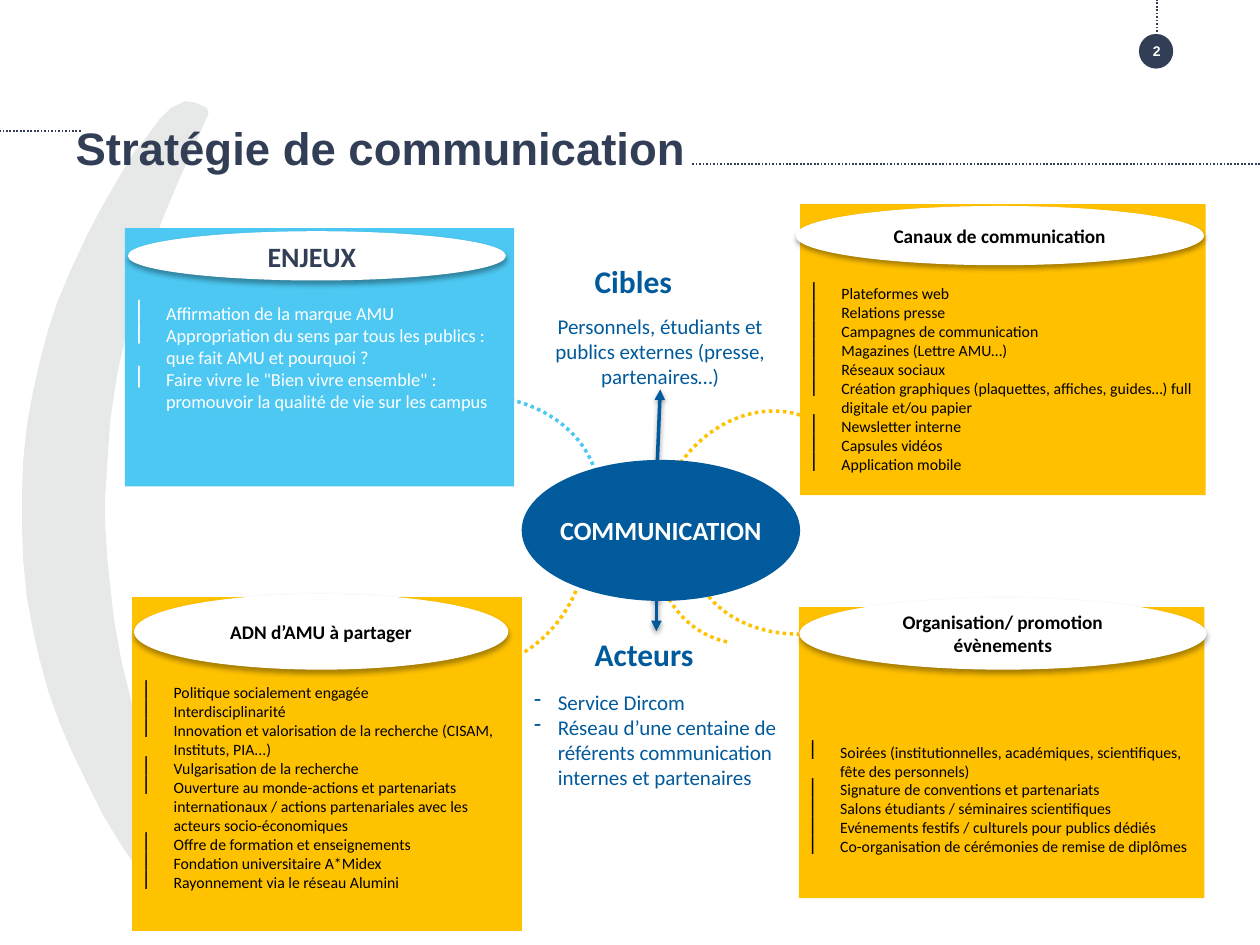
from lxml import etree
from pptx import Presentation
from pptx.dml.color import RGBColor
from pptx.enum.dml import MSO_LINE
from pptx.enum.shapes import MSO_CONNECTOR, MSO_SHAPE as Shape
from pptx.enum.text import MSO_ANCHOR as Anchor, PP_ALIGN as Align
from pptx.oxml.ns import qn
from pptx.util import Pt

COLORS = {"navy": "313E56", "blue": "005A9B", "sky": "4CC8F2", "gold": "FFC200",
          "amber": "FFC000", "grey": "E7E8E8", "white": "FFFFFF", "black": "000000"}
RGB = {name: RGBColor.from_string(value) for name, value in COLORS.items()}


def write(shape, lines, size, color, bold=False, align=Align.LEFT, anchor=Anchor.MIDDLE,
          insets=(0, 0, 0, 0), bullet=None, indent=0, font="Calibri"):
    frame = shape.text_frame
    frame.word_wrap = True
    frame.vertical_anchor = anchor
    frame.margin_left, frame.margin_top, frame.margin_right, frame.margin_bottom = map(Pt, insets)
    frame.text = "\n".join(lines)
    for para in frame.paragraphs:
        para.alignment = align
        if bullet:
            properties = para._p.get_or_add_pPr()
            properties.set("marL", str(Pt(indent)))
            properties.set("indent", str(-Pt(indent)))
            etree.SubElement(properties, qn("a:buChar"), char=bullet)
        for span in para.runs:
            span.font.name = font
            span.font.size = Pt(size)
            span.font.bold = bold
            span.font.color.rgb = RGB[color]


def set_effects(item, opacity=0, distance=0):
    effects = etree.SubElement(item._element.spPr, qn("a:effectLst"))
    if opacity:
        shadow = etree.SubElement(effects, qn("a:outerShdw"), blurRad=str(Pt(3.1)),
                                  dist=str(Pt(distance)), dir="5400000", rotWithShape="0")
        tone = etree.SubElement(shadow, qn("a:srgbClr"), val=COLORS["black"])
        etree.SubElement(tone, qn("a:alpha"), val=str(opacity * 1000))


deck = Presentation()
deck.slide_width, deck.slide_height = Pt(720), Pt(540)
page = deck.slides.add_slide(deck.slide_layouts[6])
shapes = page.shapes

outer_edge = [(118.8, 64.8), (118, 62), (111.6, 59), (105.8, 58.3), (98, 62), (91.4, 68.4),
              (84.2, 78.5), (77, 87.1), (68.4, 101.5), (57.6, 120.2), (49.7, 135.4),
              (41, 154.1), (33.1, 172.8), (28.1, 187.9), (23, 207.4), (19.4, 223.2),
              (15.8, 242.6), (13.7, 262.8), (13, 280.8), (13, 302.4), (13.7, 320.4),
              (15.8, 341.3), (19.4, 360.7), (23, 376.6), (28.1, 395.3), (34.6, 413.3),
              (41, 428.4), (49.7, 446.4), (59.8, 466.6), (71.3, 485.3), (79.9, 497.5),
              (87.8, 509.8), (94.3, 517), (103, 523.4), (111.6, 524.2), (118.8, 519.1)]
inner_edge = [(118.8, 517.7), (113, 504), (105.1, 486), (97.9, 469.4), (90.7, 450.7),
              (82, 426.9), (76.3, 407.5), (69.1, 378), (64.8, 354.2), (61.2, 321.8),
              (59.8, 300.2), (59.8, 283), (61.2, 261.4), (62.6, 240.5), (67, 211.7),
              (74.2, 181.4), (82.8, 152.6), (92.2, 126), (102.2, 102.2), (111.6, 81.4)]
outline = [(Pt(x), Pt(y)) for x, y in outer_edge + inner_edge]
builder = shapes.build_freeform(*outline[0])
builder.add_line_segments(outline[1:], close=True)
crescent = builder.convert_to_shape()
crescent.shadow.inherit = False
crescent.fill.solid()
crescent.fill.fore_color.rgb = RGB["grey"]
crescent.line.color.rgb = RGB["grey"]
crescent.line.width = Pt(0.75)

badge = shapes.add_shape(Shape.OVAL, Pt(650.8), Pt(19.4), Pt(19.6), Pt(19.8))
badge.shadow.inherit = False
badge.fill.solid()
badge.fill.fore_color.rgb = RGB["navy"]
badge.line.fill.background()

for points in [(661, 20.2, 661, -15.1), (46.1, 74.9, 0, 74.9), (720, 93.6, 395.3, 93.6)]:
    rule = shapes.add_connector(MSO_CONNECTOR.STRAIGHT, *map(Pt, points))
    rule.line.color.rgb = RGB["navy"]
    rule.line.width = Pt(1)
    rule.line.dash_style = MSO_LINE.ROUND_DOT
    set_effects(rule)

title = shapes.add_textbox(Pt(43.2), Pt(68.4), Pt(358.6), Pt(20.2))
write(title, ["Stratégie de communication"], 26, "navy", True, anchor=Anchor.TOP, font="Arial")
number = shapes.add_textbox(Pt(643), Pt(23.8), Pt(36), Pt(10.8))
write(number, ["2"], 8, "white", True, Align.CENTER, font="Arial")

for heading, top in [("Cibles", 149.8), ("Acteurs", 362.9)]:
    box = shapes.add_textbox(Pt(339.8), Pt(top), Pt(83.5), Pt(21.6))
    write(box, [heading], 18, "blue", True)

targets = shapes.add_textbox(Pt(305.3), Pt(178.6), Pt(144), Pt(43.9))
write(targets, ["Personnels, étudiants et publics externes (presse, partenaires…)"], 12, "blue",
      align=Align.CENTER)
actors = shapes.add_textbox(Pt(305.3), Pt(393.8), Pt(144), Pt(76.3))
write(actors, ["Service Dircom",
               "Réseau d’une centaine de référents communication internes et partenaires"],
      12, "blue", anchor=Anchor.TOP, bullet="-", indent=13.5)

for points, goal in [((375.1, 337, 375.1, 360.7), None), ((377.3, 222.5, 375.1, 277.2), targets)]:
    arrow = shapes.add_connector(MSO_CONNECTOR.STRAIGHT, *map(Pt, points))
    if goal:
        arrow.begin_connect(goal, 2)
    arrow.line.color.rgb = RGB["blue"]
    arrow.line.width = Pt(2)
    for end in ("a:headEnd", "a:tailEnd"):
        etree.SubElement(arrow.line._get_or_add_ln(), qn(end), type="triangle")
    set_effects(arrow, 38, 1.6)

panels = [
    (Shape.RECTANGLE, (71.3, 130.3, 222.5, 147.6), "sky", 10.5, "white", 0, [
        "Affirmation de la marque AMU",
        "Appropriation du sens par tous les publics : que fait AMU et pourquoi ?",
        "Faire vivre le \"Bien vivre ensemble\" : promouvoir la qualité de vie sur les campus"]),
    (Shape.LINE_CALLOUT_2_BORDER_AND_ACCENT_BAR, (75.6, 341.3, 222.5, 190.8), "gold", 9, "black", 26, [
        "Politique socialement engagée",
        "Interdisciplinarité",
        "Innovation et valorisation de la recherche (CISAM, Instituts, PIA...)",
        "Vulgarisation de la recherche",
        "Ouverture au monde-actions et partenariats internationaux / actions partenariales"
        " avec les acteurs socio-économiques",
        "Offre de formation et enseignements",
        "Fondation universitaire A*Midex",
        "Rayonnement via le réseau Alumini"]),
    (Shape.RECTANGLE, (457.2, 116.6, 231.8, 166.3), "amber", 9, "black", 33.6, [
        "Plateformes web",
        "Relations presse",
        "Campagnes de communication",
        "Magazines (Lettre AMU…)",
        "Réseaux sociaux",
        "Création graphiques (plaquettes, affiches, guides…) full digitale et/ou papier",
        "Newsletter interne",
        "Capsules vidéos",
        "Application mobile"]),
    (Shape.RECTANGLE, (456.5, 347, 231.8, 166.3), "amber", 9, "black", 53, [
        "Soirées (institutionnelles, académiques, scientifiques, fête des personnels)",
        "Signature de conventions et partenariats",
        "Salons étudiants / séminaires scientifiques",
        "Evénements festifs / culturels pour publics dédiés",
        "Co-organisation de cérémonies de remise de diplômes"]),
]
for kind, place, fill, size, color, top_inset, lines in panels:
    panel = shapes.add_shape(kind, *map(Pt, place))
    panel.shadow.inherit = False
    panel.fill.solid()
    panel.fill.fore_color.rgb = RGB[fill]
    panel.line.fill.background()
    write(panel, lines, size, color, insets=(6.75, top_inset, 6.75, 0), bullet="⎜", indent=16.9)

for place, turn, color, start in [
        ((201.6, 226.1, 140.4, 113), 0, "sky", None),
        ((207.4, 257, 136.8, 115.9), 113.1, "gold", None),
        ((393.1, 248.4, 140.4, 113), 165.8, "gold", None),
        ((365.8, 243.4, 136.8, 115.9), 295.9, "gold", 170.08)]:
    arc = shapes.add_shape(Shape.ARC, *map(Pt, place))
    arc.shadow.inherit = False
    arc.rotation = turn
    if start:
        arc.adjustments[0] = start * 0.6
    arc.fill.background()
    arc.line.color.rgb = RGB[color]
    arc.line.width = Pt(2)
    arc.line.dash_style = MSO_LINE.ROUND_DOT

hub = shapes.add_shape(Shape.OVAL, Pt(298.1), Pt(262.8), Pt(159.1), Pt(80.6))
hub.shadow.inherit = False
hub.fill.solid()
hub.fill.fore_color.rgb = RGB["blue"]
hub.line.fill.background()
write(hub, ["COMMUNICATION"], 15, "white", True, Align.CENTER)
hub.text_frame.word_wrap = False

for label, place, size, color, right_inset in [
        ("ENJEUX", (73.4, 132.5, 215.3, 27.4), 16, "navy", 5.6),
        ("ADN d’AMU à partager", (77, 339.8, 213.1, 42.5), 11, "black", 0),
        ("Canaux de communication", (455, 118.1, 232.6, 33.1), 11, "black", 0),
        ("Organisation/ promotion évènements", (457.2, 342, 231.8, 40.3), 11, "black", 0)]:
    oval = shapes.add_shape(Shape.OVAL, *map(Pt, place))
    oval.fill.solid()
    oval.fill.fore_color.rgb = RGB["white"]
    oval.line.color.rgb = RGB["white"]
    oval.line.width = Pt(0.75)
    set_effects(oval, 35, 1.8)
    write(oval, [label], size, color, True, Align.CENTER, insets=(0, 0, right_inset, 0))

deck.save("out.pptx")
